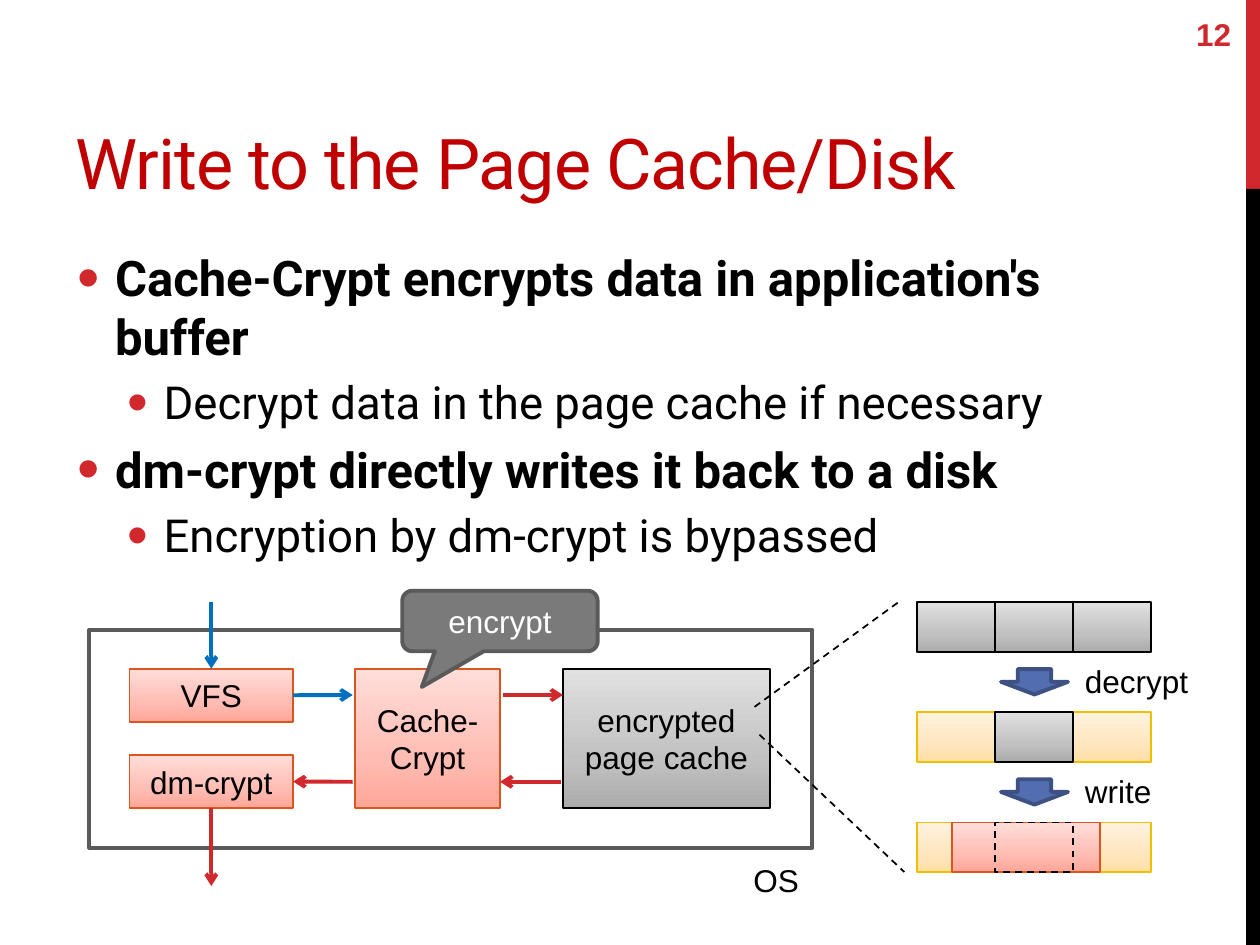
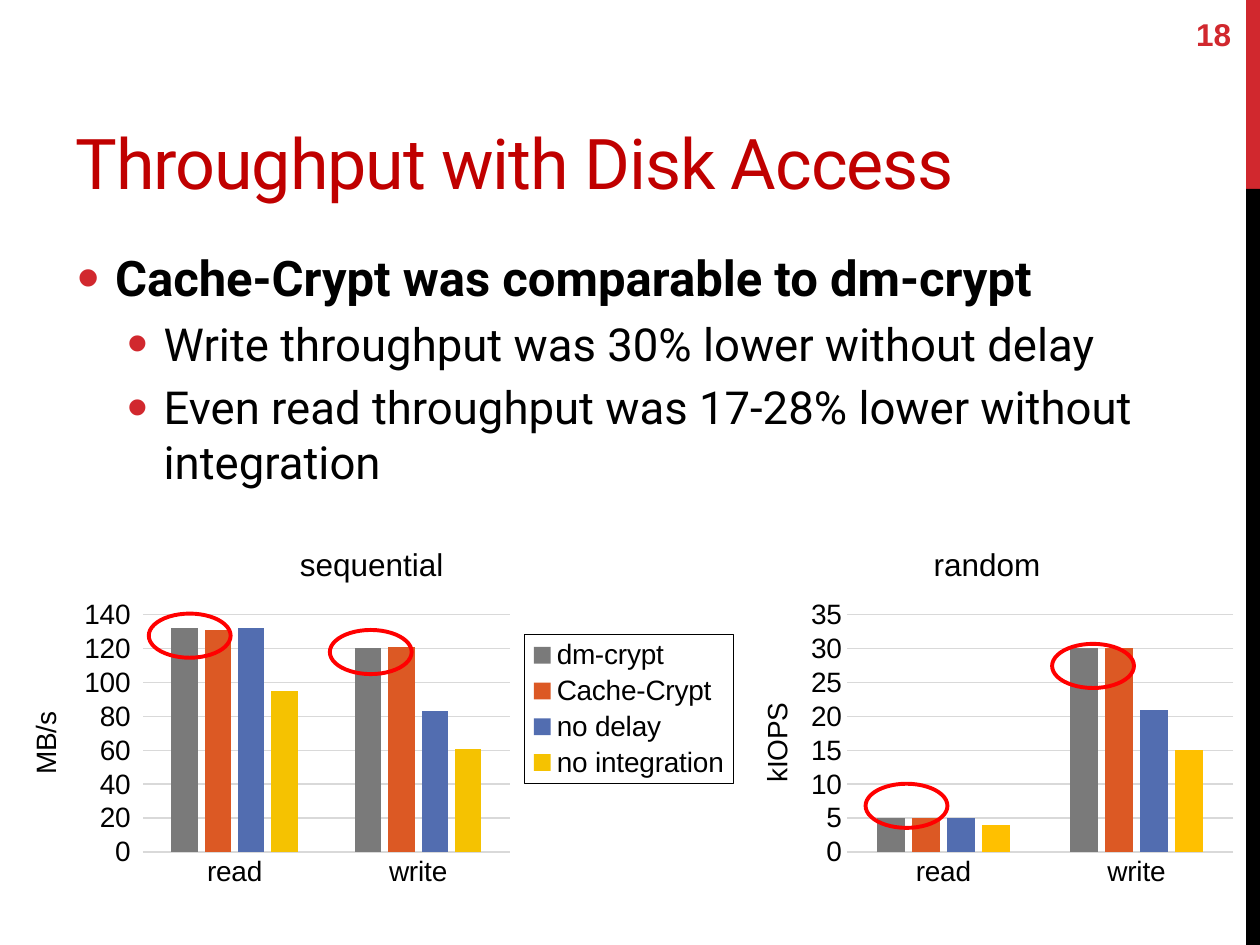
from lxml import etree
from pptx import Presentation
from pptx.chart.data import CategoryChartData
from pptx.dml.color import RGBColor
from pptx.enum.chart import XL_CHART_TYPE, XL_LEGEND_POSITION, XL_TICK_MARK
from pptx.enum.dml import MSO_LINE
from pptx.enum.shapes import MSO_CONNECTOR, MSO_SHAPE
from pptx.enum.text import MSO_ANCHOR, PP_ALIGN
from pptx.oxml import parse_xml
from pptx.oxml.ns import nsdecls, qn
from pptx.util import Cm, Pt

RECT, ELLIPSE, DOWN = MSO_SHAPE.RECTANGLE, MSO_SHAPE.OVAL, MSO_SHAPE.DOWN_ARROW
CALLOUT = MSO_SHAPE.ROUNDED_RECTANGULAR_CALLOUT
STRAIGHT, DASH = MSO_CONNECTOR.STRAIGHT, MSO_LINE.DASH
TOP, MIDDLE, BOTTOM = MSO_ANCHOR.TOP, MSO_ANCHOR.MIDDLE, MSO_ANCHOR.BOTTOM
LEFT, CENTER, RIGHT = PP_ALIGN.LEFT, PP_ALIGN.CENTER, PP_ALIGN.RIGHT
COLUMNS, LEGEND_RIGHT = XL_CHART_TYPE.COLUMN_CLUSTERED, XL_LEGEND_POSITION.RIGHT
NO_TICK, OUTSIDE = XL_TICK_MARK.NONE, XL_TICK_MARK.OUTSIDE
SIDE_TOP, SIDE_BOTTOM, SIDE_RIGHT = 0, 2, 3

COLORS = {
    "black": "000000", "white": "FFFFFF", "accent": "D1282E", "title": "C00000",
    "frame": "5A5A5A", "gray": "7A7A7A", "blue": "0070C0", "mark": "FF0000",
    "grid": "D9D9D9", "arrow": "526DB0", "arrow edge": "3D5182",
    "orange": "DC5924", "gold": "F5C201", "amber": "FFC000",
    "red edge": "DC551F", "yellow edge": "F1BE00",
}
# Gradient stops at 0, 35 and 100 %, then the outline
BLOCKS = {
    "red": ("FFA698", "FFBCB3", "FFDED9", "red edge"),
    "gray": ("ABABAB", "C1C1C1", "E1E1E1", "black"),
    "yellow": ("FFDFA5", "FFE6BD", "FFF2DF", "yellow edge"),
}
# Text size, bold, left margin, hanging indent, space before
LEVELS = [(28, True, 0.75, 0.75, 6), (26, False, 1.73, 0.72, 5.2)]


def rgb(name):
    return RGBColor.from_string(COLORS[name])


class Deck:
    HEADING, BODY = "Roboto", "Arial"

    def __init__(self):
        self.prs = Presentation()
        self.prs.slide_width, self.prs.slide_height = Cm(25.4), Cm(19.05)
        self.s = None

    def slide(self, title, number, bullets):
        self.s = self.prs.slides.add_slide(self.prs.slide_layouts[6])
        self.shape(RECT, 25.12, 0, 0.3, 3.81, "accent")
        self.shape(RECT, 25.12, 3.81, 0.3, 15.24, "black")
        tf = self.text(title, 1.27, 0.42, 22.91, 3.81, 40, "title",
                       font=self.HEADING, anchor=BOTTOM)
        tf.paragraphs[0].runs[0].font._element.set("spc", "-60")
        self.bullets(bullets)
        self.text(number, 23.17, 0.18, 1.9, 1.02, 18, "accent", bold=True,
                  anchor=MIDDLE, align=RIGHT)

    def style(self, p, size, color, font=None, bold=False, align=LEFT):
        p.alignment = align
        for r in p.runs:
            self.font(r.font, size, color, font, bold)

    def font(self, f, size, color="black", name=None, bold=False):
        f.name, f.size, f.bold = name or self.BODY, Pt(size), bold
        f.color.rgb = rgb(color)

    def text(self, text, x, y, w, h, size=18, color="black", font=None,
             bold=False, anchor=TOP, align=LEFT, wrap=True):
        tf = self.s.shapes.add_textbox(Cm(x), Cm(y), Cm(w), Cm(h)).text_frame
        tf.word_wrap, tf.vertical_anchor = wrap, anchor
        tf.text = text
        self.style(tf.paragraphs[0], size, color, font, bold, align)
        return tf

    def bullets(self, items):
        box = self.s.shapes.add_textbox(Cm(1.27), Cm(4.87), Cm(22.91), Cm(13.16))
        tf = box.text_frame
        tf.word_wrap = True
        tf.margin_left = tf.margin_right = Cm(0.3)
        for i, (level, text) in enumerate(items):
            p = tf.add_paragraph() if i else tf.paragraphs[0]
            p.text, p.level = text, level
            size, bold, margin, hang, before = LEVELS[level]
            self.style(p, size, "black", self.HEADING, bold)
            p.space_before = Pt(before)
            pPr = p._p.get_or_add_pPr()
            pPr.set("marL", str(Cm(margin)))
            pPr.set("indent", str(-Cm(hang)))
            clr = etree.SubElement(pPr, qn("a:buClr"))
            etree.SubElement(clr, qn("a:srgbClr"), val=COLORS["accent"])
            etree.SubElement(pPr, qn("a:buSzPct"), val="130000")
            etree.SubElement(pPr, qn("a:buFont"), typeface=self.BODY)
            etree.SubElement(pPr, qn("a:buChar"), char="•")

    def shape(self, kind, x, y, w, h, fill=None, line=None, width=2.25,
              text=None, color="black"):
        sp = self.s.shapes.add_shape(kind, Cm(x), Cm(y), Cm(w), Cm(h))
        sp.shadow.inherit = False
        if fill:
            sp.fill.solid()
            sp.fill.fore_color.rgb = rgb(fill)
        else:
            sp.fill.background()
        if line:
            sp.line.color.rgb, sp.line.width = rgb(line), Pt(width)
        else:
            sp.line.fill.background()
        if text:
            tf = sp.text_frame
            tf.text, tf.vertical_anchor = text, MIDDLE
            for p in tf.paragraphs:
                self.style(p, 18, color, align=CENTER)
        return sp

    def block(self, kind, x, y, w, h, text=None):
        """Rectangle with a vertical gradient, darkest at the bottom."""
        dark, middle, light, edge = BLOCKS[kind]
        sp = self.shape(RECT, x, y, w, h, line=edge, width=1, text=text)
        sp.fill.gradient()
        sp.fill.gradient_angle = 90
        for stop, value in zip(sp.fill.gradient_stops, (dark, light)):
            stop.color.rgb = RGBColor.from_string(value)
        gs = parse_xml(f'<a:gs {nsdecls("a")} pos="35000"><a:srgbClr val="{middle}"/></a:gs>')
        sp._element.find(".//" + qn("a:gsLst")).insert(1, gs)
        return sp

    def line(self, x1, y1, x2, y2, color="black", arrow=True, begin=None, end=None):
        """Arrow or thin dashed line; begin and end are (shape, side)."""
        c = self.s.shapes.add_connector(STRAIGHT, Cm(x1), Cm(y1), Cm(x2), Cm(y2))
        c.line.color.rgb, c.line.width = rgb(color), Pt(2.25 if arrow else 1)
        if arrow:
            etree.SubElement(c.line._get_or_add_ln(), qn("a:tailEnd"), type="arrow")
        else:
            c.line.dash_style = DASH
        etree.SubElement(c._element.spPr, qn("a:effectLst"))
        if begin:
            c.begin_connect(*begin)
        if end:
            c.end_connect(*end)

    def chart(self, frame, title, title_at, unit, unit_at, plot_at, top, step,
              tick, series, legend_at=None):
        """Column chart; the parts are placed in cm from its corner."""
        data = CategoryChartData()
        data.categories = ["read", "write"]
        for name, values, _ in series:
            data.add_series(name, values)
        chart = self.s.shapes.add_chart(COLUMNS, *map(Cm, frame), data).chart
        size = frame[2:]
        self.font(chart.font, 16)
        tf = chart.chart_title.text_frame
        tf.text = title
        self.style(tf.paragraphs[0], 18, "black", align=CENTER)
        self.place(chart.chart_title._element, size, title_at)

        plot = chart.plots[0]
        plot.gap_width, plot.overlap, plot.vary_by_categories = 219, -27, False
        for ser, (_, _, color) in zip(plot.series, series):
            ser.format.fill.solid()
            ser.format.fill.fore_color.rgb = rgb(color)
        self.place(chart._chartSpace.chart.plotArea, size, plot_at)

        cat, val = chart.category_axis, chart.value_axis
        for axis in (cat, val):
            axis.major_tick_mark = axis.minor_tick_mark = NO_TICK
            self.font(axis.tick_labels.font, 16)
        val.major_tick_mark = tick
        val.minimum_scale, val.maximum_scale, val.major_unit = 0, top, step
        val.format.line.fill.background()
        for line in (cat.format.line, val.major_gridlines.format.line):
            line.color.rgb, line.width = rgb("grid"), Pt(0.75)
        tf = val.axis_title.text_frame
        tf.text = unit
        self.style(tf.paragraphs[0], 16, "black", align=CENTER)
        tf._txBody.bodyPr.set("rot", "-5400000")
        tf._txBody.bodyPr.set("vert", "horz")
        self.place(val.axis_title._element, size, unit_at)

        chart.has_legend = legend_at is not None
        if legend_at:
            legend = chart.legend
            legend.position, legend.include_in_layout = LEGEND_RIGHT, False
            self.font(legend.font, 16)
            self.place(legend._element, size, legend_at)
            border = parse_xml(
                f'<c:spPr {nsdecls("c", "a")}><a:ln w="9525"><a:solidFill>'
                f'<a:srgbClr val="{COLORS["black"]}"/></a:solidFill></a:ln></c:spPr>')
            legend._element.find(qn("c:txPr")).addprevious(border)

    @staticmethod
    def place(part, size, at):
        """Give a chart part a manual layout from x, y and perhaps w, h."""
        old = part.find(qn("c:layout"))
        if old is not None:
            part.remove(old)
        layout = etree.Element(qn("c:layout"))
        manual = etree.SubElement(layout, qn("c:manualLayout"))
        if part.tag == qn("c:plotArea"):
            etree.SubElement(manual, qn("c:layoutTarget"), val="inner")
        for axis in "xy":
            etree.SubElement(manual, qn(f"c:{axis}Mode"), val="edge")
        for tag, value, full in zip("xywh", at, size * 2):
            etree.SubElement(manual, qn(f"c:{tag}"), val=f"{value / full:.4f}")
        overlay = part.find(qn("c:overlay"))
        (part[0] if overlay is None else overlay).addprevious(layout)


def write_slide(d):
    d.slide("Write to the Page Cache/Disk", "12", [
        (0, "Cache-Crypt encrypts data in application's buffer"),
        (1, "Decrypt data in the page cache if necessary"),
        (0, "dm-crypt directly writes it back to a disk"),
        (1, "Encryption by dm-crypt is bypassed")])

    d.shape(RECT, 1.8, 12.7, 14.58, 4.39, "white", "frame")
    vfs = d.block("red", 2.61, 13.48, 3.3, 1.07, "VFS")
    d.block("red", 7.16, 13.48, 2.92, 2.81, "Cache-\nCrypt")
    d.block("gray", 11.35, 13.48, 4.17, 2.81, "encrypted\npage cache")
    dm_crypt = d.block("red", 2.61, 15.22, 3.3, 1.07, "dm-crypt")
    d.text("OS", 14.94, 17.23, 1.45, 1.02, wrap=False)
    callout = d.shape(CALLOUT, 8.11, 11.91, 3.94, 1.22, "gray", "frame",
                      text="encrypt", color="white")
    callout.adjustments[0], callout.adjustments[1] = -0.4, 1.09

    d.line(4.26, 12.14, 4.26, 13.48, "blue", end=(vfs, SIDE_TOP))
    d.line(5.91, 14.01, 7.11, 14.01, "blue", begin=(vfs, SIDE_RIGHT))
    d.line(10.13, 14.01, 11.35, 14.01, "accent")
    d.line(11.3, 15.76, 10.08, 15.76, "accent")
    d.line(7.11, 15.76, 5.91, 15.76, "accent", end=(dm_crypt, SIDE_RIGHT))
    d.line(4.26, 16.29, 4.26, 17.86, "accent", begin=(dm_crypt, SIDE_BOTTOM))

    x, y, w, h, step = 18.49, 12.14, 1.57, 1, 2.22
    cells = [("yellow", 0, 1), ("yellow", 2, 1), ("yellow", 0, 2), ("yellow", 2, 2),
             ("gray", 0, 0), ("gray", 1, 0), ("gray", 2, 0), ("gray", 1, 1)]
    for kind, column, row in cells:
        d.block(kind, x + column * w, y + row * step, w, h)
    d.block("red", 19.19, y + 2 * step, 2.98, h)
    d.shape(RECT, x + w, y + 2 * step, w, h, line="black", width=1).line.dash_style = DASH
    for i, (label, width) in enumerate([("decrypt", 2.62), ("write", 1.85)]):
        d.shape(DOWN, 20.18, 13.49 + i * step, 1.35, 0.51, "arrow", "arrow edge")
        d.text(label, 21.62, 13.22 + i * step, width, 1.02, wrap=False)
    d.line(15.21, 14.25, 18.11, 12.14, arrow=False)
    d.line(15.31, 14.81, 18.23, 17.58, arrow=False)


def throughput_slide(d):
    d.slide("Throughput with Disk Access", "18", [
        (0, "Cache-Crypt was comparable to dm-crypt"),
        (1, "Write throughput was 30% lower without delay"),
        (1, "Even read throughput was 17-28% lower without integration")])
    names = ["dm-crypt", "Cache-Crypt", "no delay", "no integration"]
    plain_names = [f"Series {i}" for i in range(1, 5)]
    colors = ["gray", "orange", "arrow"]
    sequential = [(132, 120), (131, 121), (132, 83), (95, 61)]
    random = [(5, 30), (5, 30), (5, 21), (4, 15)]
    d.chart((0, 10.57, 14.99, 7.47), "sequential", (5.93, 0.28),
            "MB/s", (0.46, 3.68), (2.88, 1.82, 7.4, 4.79), 140, 20, OUTSIDE,
            list(zip(names, sequential, colors + ["gold"])),
            legend_at=(10.57, 2.22, 4.22, 3))
    d.chart((14.73, 10.57, 10.34, 7.47), "random", (3.98, 0.28),
            "kIOPS", (0.47, 3.5), (2.34, 1.82, 7.79, 4.79), 35, 5, NO_TICK,
            list(zip(plain_names, random, colors + ["amber"])))
    for x, y in [(3, 12.37), (6.65, 12.7), (21.21, 12.98), (17.45, 15.8)]:
        d.shape(ELLIPSE, x, y, 1.65, 0.89, line="mark")


def main():
    d = Deck()
    write_slide(d)
    throughput_slide(d)
    d.prs.save("out.pptx")


if __name__ == "__main__":
    main()
